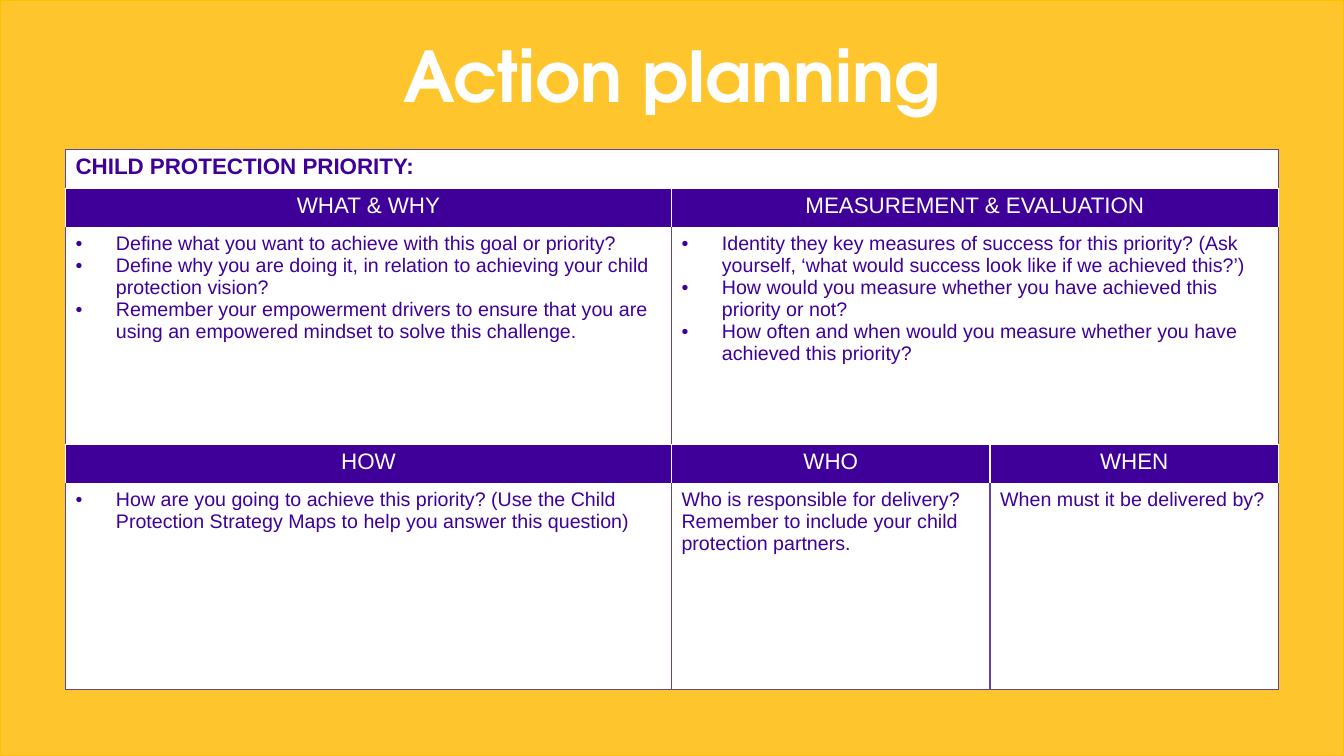
from lxml.etree import SubElement
from pptx import Presentation
from pptx.dml.color import RGBColor
from pptx.enum.shapes import MSO_SHAPE
from pptx.enum.text import MSO_AUTO_SIZE, PP_ALIGN
from pptx.oxml import parse_xml
from pptx.oxml.ns import nsdecls, qn
from pptx.util import Inches, Pt

PURPLE, RULE, WHITE = "3E0099", "63459B", "FFFFFF"
YELLOW, AMBER = "FEC52C", "FFC000"


def color(value):
    return RGBColor.from_string(value)


class Board:
    """Holds the style and the current slide."""

    font = "Arial"
    title_font = "TeX Gyre Adventor"

    def __init__(self, s):
        self.s = s

    def format(self, p, size, ink, bold=False, font=None, center=False):
        p.alignment = PP_ALIGN.CENTER if center else PP_ALIGN.LEFT
        for r in p.runs:
            r.font.name = font or self.font
            r.font.size = Pt(size)
            r.font.bold = bold
            r.font.color.rgb = color(ink)

    def panel(self, x, y, w, h, fill, line):
        sp = self.s.shapes.add_shape(
            MSO_SHAPE.RECTANGLE, Inches(x), Inches(y), Inches(w), Inches(h))
        sp.shadow.inherit = False
        sp.fill.solid()
        sp.fill.fore_color.rgb = color(fill)
        sp.line.color.rgb = color(line)
        sp.line.width = Pt(1)

    def title(self, x, y, w, h, text):
        sp = self.s.shapes.add_textbox(Inches(x), Inches(y), Inches(w), Inches(h))
        tf = sp.text_frame
        tf.word_wrap = True
        tf.auto_size = MSO_AUTO_SIZE.SHAPE_TO_FIT_TEXT
        tf.text = text
        self.format(tf.paragraphs[0], 50, WHITE, True, self.title_font, True)

    def table(self, x, y, cols, rows):
        frame = self.s.shapes.add_table(
            len(rows), len(cols), Inches(x), Inches(y),
            Inches(sum(cols)), Inches(sum(rows)))
        table = frame.table
        table.first_row = table.horz_banding = False
        for column, width in zip(table.columns, cols):
            column.width = Inches(width)
        for row, height in zip(table.rows, rows):
            row.height = Inches(height)
        return table

    def borders(self, cell, edges):
        tcPr = cell._tc.get_or_add_tcPr()
        for i, (side, ink) in enumerate(zip("LRTB", edges)):
            tcPr.insert(i, parse_xml(
                f'<a:ln{side} {nsdecls("a")} w="{Pt(1)}"><a:solidFill>'
                f'<a:srgbClr val="{ink}"/></a:solidFill></a:ln{side}>'))

    def bullet(self, p):
        pPr = p._p.get_or_add_pPr()
        pPr.set("marL", str(Inches(0.4)))
        pPr.set("indent", str(Inches(-0.4)))
        SubElement(pPr, qn("a:buFont")).set("typeface", self.font)
        SubElement(pPr, qn("a:buChar")).set("char", "•")

    def cells(self, table, row, col, span, lines, fill, edges,
              bullets=False, **style):
        origin = table.cell(row, col)
        if span > 1:
            origin.merge(table.cell(row, col + span - 1))
        for c in range(col, col + span):
            cell = table.cell(row, c)
            cell.fill.solid()
            cell.fill.fore_color.rgb = color(fill)
            self.borders(cell, edges)
        tf = origin.text_frame
        tf.text = "\n".join(lines)
        for p in tf.paragraphs:
            self.format(p, **style)
            if bullets:
                self.bullet(p)


def main():
    prs = Presentation()
    prs.slide_width, prs.slide_height = Inches(13.33), Inches(7.5)
    board = Board(prs.slides.add_slide(prs.slide_layouts[6]))

    # Background and title
    board.panel(0, 0, 13.33, 7.5, YELLOW, AMBER)
    board.title(1.02, 0.27, 11.29, 0.94, "Action planning")

    # Planning table: edges run left, right, top, bottom
    table = board.table(0.65, 1.48, [6.01, 3.16, 2.86],
                        [0.39, 0.39, 2.15, 0.39, 2.04])
    board.cells(table, 0, 0, 3, ["CHILD PROTECTION PRIORITY:"], WHITE,
                (RULE, RULE, RULE, WHITE), size=16, ink=PURPLE, bold=True)

    # Headings: row, column, span, text
    for row, col, span, text in [
        (1, 0, 1, "WHAT & WHY"),
        (1, 1, 2, "MEASUREMENT & EVALUATION"),
        (3, 0, 1, "HOW"),
        (3, 1, 1, "WHO"),
        (3, 2, 1, "WHEN"),
    ]:
        board.cells(table, row, col, span, [text], PURPLE, (WHITE,) * 4,
                    size=16, ink=WHITE, center=True)

    # Guidance: row, column, span, bulleted, lines
    for row, col, span, bullets, lines in [
        (2, 0, 1, True, [
            "Define what you want to achieve with this goal or priority?",
            "Define why you are doing it, in relation to achieving your child "
            "protection vision?",
            "Remember your empowerment drivers to ensure that you are using an "
            "empowered mindset to solve this challenge."]),
        (2, 1, 2, True, [
            "Identity they key measures of success for this priority? (Ask "
            "yourself, ‘what would success look like if we achieved this?’)",
            "How would you measure whether you have achieved this priority or not?",
            "How often and when would you measure whether you have achieved "
            "this priority?"]),
        (4, 0, 1, True, [
            "How are you going to achieve this priority? (Use the Child "
            "Protection Strategy Maps to help you answer this question)"]),
        (4, 1, 1, False, [
            "Who is responsible for delivery? Remember to include your child "
            "protection partners."]),
        (4, 2, 1, False, ["When must it be delivered by?"]),
    ]:
        bottom = RULE if row == 4 else WHITE
        board.cells(table, row, col, span, lines, WHITE,
                    (RULE, RULE, WHITE, bottom), bullets, size=14, ink=PURPLE)

    prs.save("out.pptx")


if __name__ == "__main__":
    main()
